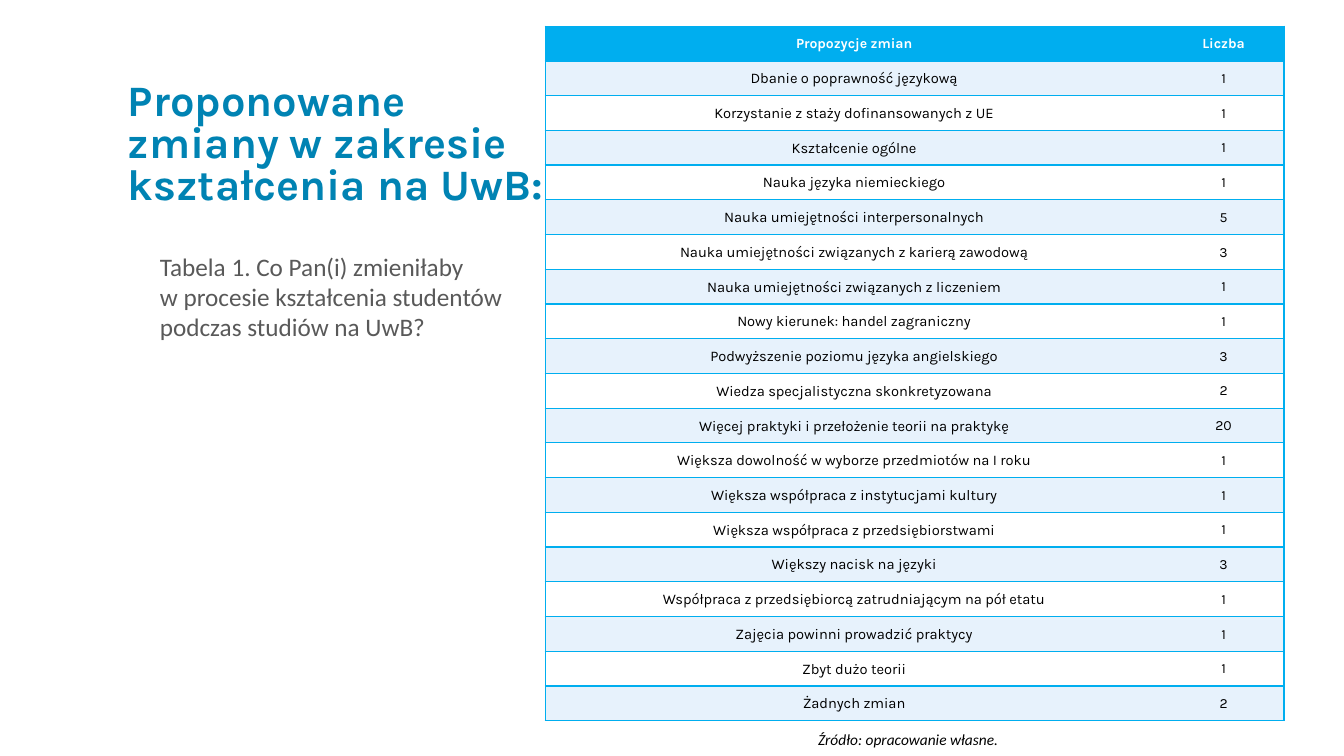
from lxml import etree
from pptx import Presentation
from pptx.dml.color import RGBColor
from pptx.enum.shapes import MSO_SHAPE
from pptx.enum.text import MSO_ANCHOR, PP_ALIGN
from pptx.oxml.ns import qn
from pptx.util import Cm, Pt

TITLE = "Proponowane \vzmiany w zakresie \vkształcenia na UwB:"
CAPTION = "Tabela 1. Co Pan(i) zmieniłaby \vw procesie kształcenia studentów \vpodczas studiów na UwB?"
SOURCE = "Źródło: opracowanie własne."
HEADER = ("Propozycje zmian", "Liczba")
PROPOSALS = [
    ("Dbanie o poprawność językową", 1),
    ("Korzystanie z staży dofinansowanych z UE", 1),
    ("Kształcenie ogólne", 1),
    ("Nauka języka niemieckiego", 1),
    ("Nauka umiejętności interpersonalnych", 5),
    ("Nauka umiejętności związanych z karierą zawodową", 3),
    ("Nauka umiejętności związanych z liczeniem", 1),
    ("Nowy kierunek: handel zagraniczny", 1),
    ("Podwyższenie poziomu języka angielskiego", 3),
    ("Wiedza specjalistyczna skonkretyzowana", 2),
    ("Więcej praktyki i przełożenie teorii na praktykę", 20),
    ("Większa dowolność w wyborze przedmiotów na I roku", 1),
    ("Większa współpraca z instytucjami kultury", 1),
    ("Większa współpraca z przedsiębiorstwami", 1),
    ("Większy nacisk na języki", 3),
    ("Współpraca z przedsiębiorcą zatrudniającym na pół etatu", 1),
    ("Zajęcia powinni prowadzić praktycy", 1),
    ("Zbyt dużo teorii", 1),
    ("Żadnych zmian", 2),
]

BLUE = RGBColor(0x00, 0xAE, 0xEF)
DARK_BLUE = RGBColor(0x00, 0x83, 0xB3)
PALE_BLUE = RGBColor(0xE7, 0xF2, 0xFC)
WHITE = RGBColor(0xFF, 0xFF, 0xFF)
BLACK = RGBColor(0x00, 0x00, 0x00)
GREY = RGBColor(0x59, 0x59, 0x59)
HEAD_FONT, TEXT_FONT = "Karla", "Calibri"
CENTER, LEFT = PP_ALIGN.CENTER, PP_ALIGN.LEFT
TOP, MIDDLE, BOTTOM = MSO_ANCHOR.TOP, MSO_ANCHOR.MIDDLE, MSO_ANCHOR.BOTTOM
RECTANGLE = MSO_SHAPE.RECTANGLE

COLUMN_WIDTHS = (Cm(15.57), Cm(3.05))
TABLE_HEIGHT = Cm(17.5)


def write(tf, text, font, size, color, bold=False, italic=False, align=LEFT, spacing=1.0):
    tf.text = text
    p = tf.paragraphs[0]
    p.alignment, p.line_spacing = align, spacing
    f = p.font
    f.name, f.size, f.bold, f.italic = font, Pt(size), bold, italic
    f.color.rgb = color


def add_borders(cell, outer_side):
    """Rule the cell above, below and on its outer side; leave the inner side open."""
    tcPr = cell._tc.get_or_add_tcPr()
    for i, side in enumerate(("lnL", "lnR", "lnT", "lnB")):
        ln = etree.Element(qn("a:" + side), w=str(Pt(1)))
        if side in (outer_side, "lnT", "lnB"):
            fill = etree.SubElement(ln, qn("a:solidFill"))
            etree.SubElement(fill, qn("a:srgbClr"), val=str(BLUE))
        else:
            etree.SubElement(ln, qn("a:noFill"))
        tcPr.insert(i, ln)


def add_title(s):
    title = s.shapes.title
    title.left, title.top, title.width, title.height = Cm(2.97), Cm(1.47), Cm(24.13), Cm(3.91)
    tf = title.text_frame
    tf.vertical_anchor = BOTTOM
    write(tf, TITLE, HEAD_FONT, 31, DARK_BLUE, bold=True, spacing=0.8)


def add_proposals(s):
    rows = [HEADER] + PROPOSALS
    table = s.shapes.add_table(len(rows), len(HEADER), Cm(13.74), Cm(0.66),
                               sum(COLUMN_WIDTHS), TABLE_HEIGHT).table
    for column, width in zip(table.columns, COLUMN_WIDTHS):
        column.width = width
    for i, row in enumerate(rows):
        table.rows[i].height = TABLE_HEIGHT // len(rows)
        is_header = i == 0
        fill = BLUE if is_header else PALE_BLUE if i % 2 else WHITE
        for j, value in enumerate(row):
            cell = table.cell(i, j)
            cell.margin_left = cell.margin_right = Cm(0.12)
            cell.margin_top = cell.margin_bottom = 0
            cell.vertical_anchor = MIDDLE
            cell.fill.solid()
            cell.fill.fore_color.rgb = fill
            add_borders(cell, "lnR" if j else "lnL")
            write(cell.text_frame, str(value), HEAD_FONT, 10 if is_header or j else 10.5,
                  WHITE if is_header else BLACK, bold=is_header, align=CENTER, spacing=1.07)


def add_caption(s):
    tf = s.shapes.add_textbox(Cm(3.78), Cm(6.2), Cm(9.32), Cm(2.57)).text_frame
    tf.word_wrap = True
    write(tf, CAPTION, TEXT_FONT, 18, GREY)


def add_source(s):
    sp = s.shapes.add_shape(RECTANGLE, Cm(17.48), Cm(18.24), Cm(10.82), Cm(0.69))
    sp.shadow.inherit = False
    sp.fill.solid()
    sp.fill.fore_color.rgb = WHITE
    sp.line.fill.background()
    tf = sp.text_frame
    tf.vertical_anchor = TOP
    write(tf, SOURCE, TEXT_FONT, 11, BLACK, italic=True, align=CENTER, spacing=1.07)


def main():
    prs = Presentation()
    prs.slide_width, prs.slide_height = Cm(33.87), Cm(19.05)
    s = prs.slides.add_slide(prs.slide_layouts[5])
    add_title(s)
    add_proposals(s)
    add_caption(s)
    add_source(s)
    prs.save("out.pptx")


if __name__ == "__main__":
    main()
